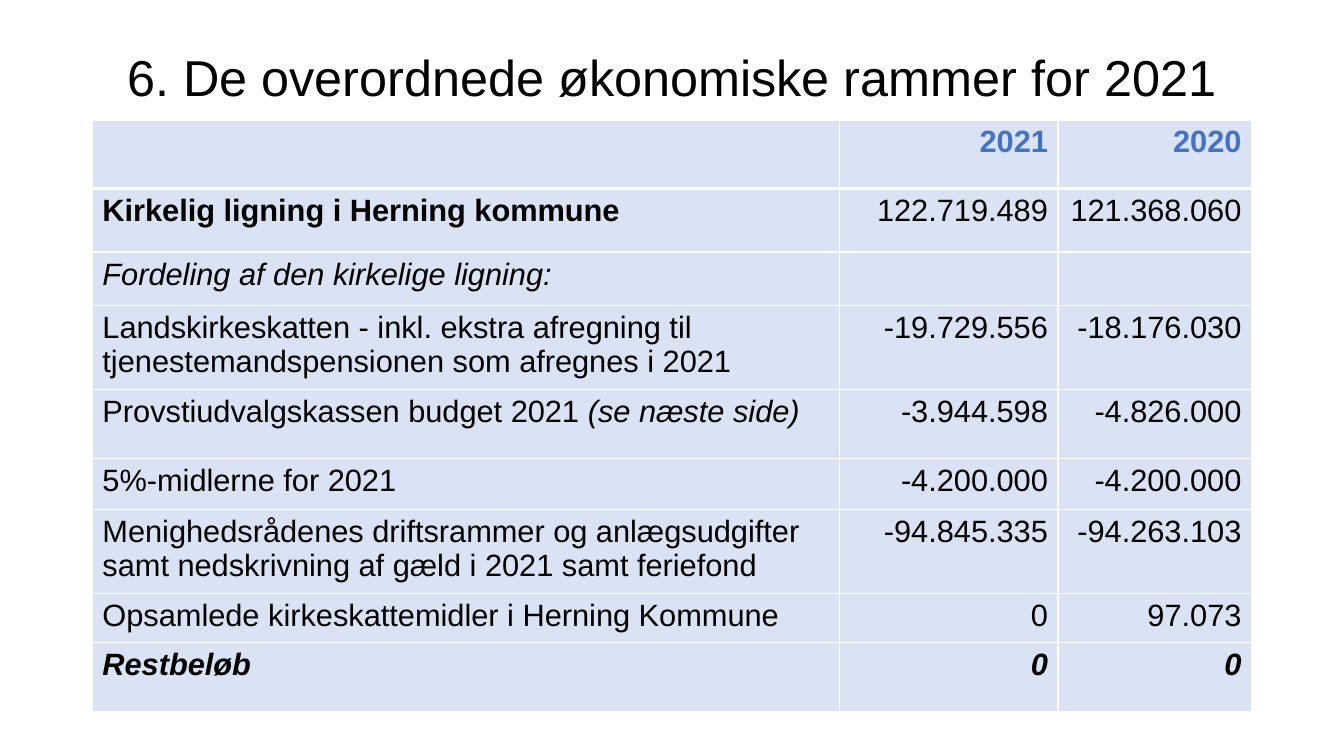
from collections import namedtuple
from dataclasses import dataclass

from lxml.etree import SubElement
from pptx import Presentation
from pptx.dml.color import RGBColor
from pptx.enum.text import MSO_ANCHOR, PP_ALIGN
from pptx.oxml.ns import qn
from pptx.util import Pt

Box = namedtuple("Box", "left top width height")


@dataclass(frozen=True)
class Theme:
    font: str = "Arial"
    ink: str = "000000"
    blue: str = "4472C4"
    pale: str = "DAE3F3"
    white: str = "FFFFFF"
    head: int = 36
    body: int = 22
    thin: int = 1
    thick: int = 3


theme = Theme()

TITLE = "6. De overordnede økonomiske rammer for 2021"
COLS = [533.6, 156.2, 138.2]
ROWS = [
    (49, "", "2021", "2020"),
    (45.4, "Kirkelig ligning i Herning kommune", "122.719.489", "121.368.060"),
    (38.2, "Fordeling af den kirkelige ligning:", "", ""),
    (59, "Landskirkeskatten - inkl. ekstra afregning til "
     "tjenestemandspensionen som afregnes i 2021", "-19.729.556", "-18.176.030"),
    (49, "Provstiudvalgskassen budget 2021 |(se næste side)",
     "-3.944.598", "-4.826.000"),
    (36.7, "5%-midlerne for 2021", "-4.200.000", "-4.200.000"),
    (35.3, "Menighedsrådenes driftsrammer og anlægsudgifter "
     "samt nedskrivning af gæld i 2021 samt feriefond",
     "-94.845.335", "-94.263.103"),
    (35.3, "Opsamlede kirkeskattemidler i Herning Kommune", "0", "97.073"),
    (49, "Restbeløb", "0", "0"),
]
HEAD, TOTAL, NOTE, REST = 0, 1, 2, len(ROWS) - 1


def write(para, text, size=theme.body, color=theme.ink, bold=False,
          italic=False, align=PP_ALIGN.LEFT):
    para.alignment = align
    run = para.add_run()
    run.text = text
    font = run.font
    font.name = theme.font
    font.size = Pt(size)
    font.bold = bold
    font.italic = italic
    font.color.rgb = RGBColor.from_string(color)


def edge(cell, side, width):
    line = SubElement(cell._tc.get_or_add_tcPr(), qn(f"a:ln{side}"),
                      w=str(Pt(width)))
    fill = SubElement(line, qn("a:solidFill"))
    SubElement(fill, qn("a:srgbClr"), val=theme.white)


def paint(cell, row):
    heavy = {"T": TOTAL, "B": HEAD}
    for side in "LRTB":
        edge(cell, side, theme.thick if heavy.get(side) == row else theme.thin)
    cell.fill.solid()
    cell.fill.fore_color.rgb = RGBColor.from_string(theme.pale)


def add_title(slide, box):
    frame = slide.shapes.add_textbox(*map(Pt, box)).text_frame
    frame.word_wrap = True
    frame.vertical_anchor = MSO_ANCHOR.MIDDLE
    para = frame.paragraphs[0]
    para.line_spacing = 0.9
    write(para, TITLE, size=theme.head, align=PP_ALIGN.CENTER)


def add_budget(slide, box):
    table = slide.shapes.add_table(len(ROWS), len(COLS), *map(Pt, box)).table
    table.horz_banding = False
    for col, width in zip(table.columns, COLS):
        col.width = Pt(width)
    for row, (height, *texts) in enumerate(ROWS):
        table.rows[row].height = Pt(height)
        for col, text in enumerate(texts):
            cell = table.cell(row, col)
            paint(cell, row)
            if not text:
                continue
            label = col == 0
            bold = row in (HEAD, REST) or (row == TOTAL and label)
            for part, words in enumerate(text.split("|")):
                write(cell.text_frame.paragraphs[0], words, bold=bold,
                      italic=row in (NOTE, REST) or part > 0,
                      color=theme.blue if row == HEAD else theme.ink,
                      align=PP_ALIGN.LEFT if label else PP_ALIGN.RIGHT)


def main():
    deck = Presentation()
    deck.slide_width, deck.slide_height = Pt(960), Pt(540)
    slide = deck.slides.add_slide(deck.slide_layouts[6])
    left, top, width, height = 66, 28.8, sum(COLS), 56.9
    add_title(slide, Box(left, top, width, height))
    add_budget(slide, Box(left, top + height, width,
                          sum(row[0] for row in ROWS)))
    deck.save("out.pptx")


if __name__ == "__main__":
    main()
